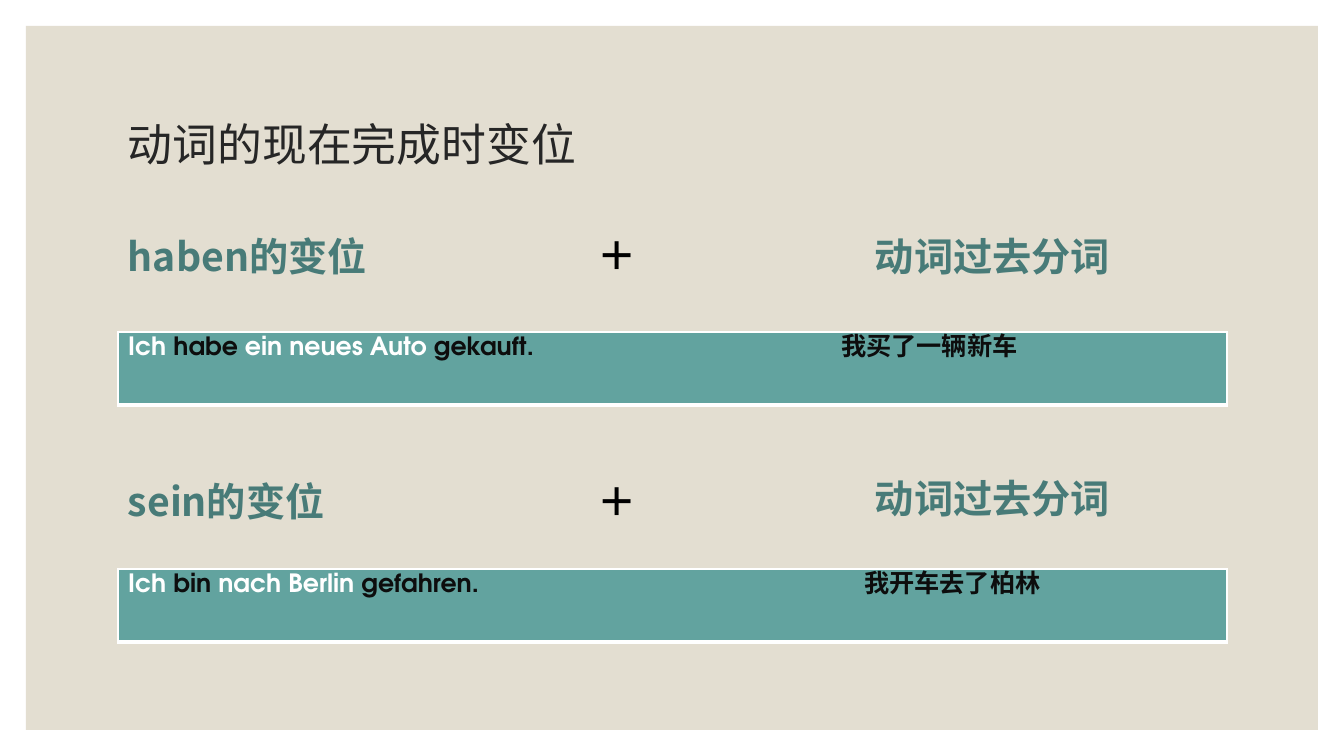
from dataclasses import dataclass

from pptx import Presentation
from pptx.dml.color import RGBColor as RGB
from pptx.enum.shapes import MSO_SHAPE as Shape
from pptx.enum.text import MSO_ANCHOR as Anchor
from pptx.oxml import parse_xml
from pptx.oxml.ns import nsdecls
from pptx.util import Pt

PX = 914400 / 100.8


@dataclass(frozen=True)
class Theme:
    sand: str = "E3DED1"
    teal: str = "62A39F"
    deep: str = "487B78"
    white: str = "FFFFFF"
    black: str = "000000"
    ink: str = "0D0D0D"
    head: str = "262626"
    han: str = "Noto Sans CJK SC"
    latin: str = "TeX Gyre Adventor"
    title: int = 32
    term: int = 28
    body: int = 18


def emu(*px):
    return [round(n * PX) for n in px]


class Deck:
    def __init__(self, theme):
        self.theme = theme
        self.prs = Presentation()
        self.prs.slide_width, self.prs.slide_height = emu(1344, 756)
        self.slide = self.prs.slides.add_slide(self.prs.slide_layouts[6])

    def panel(self, *box):
        shape = self.slide.shapes.add_shape(Shape.RECTANGLE, *emu(*box))
        shape.shadow.inherit = False
        shape.fill.solid()
        shape.fill.fore_color.rgb = RGB.from_string(self.theme.sand)
        shape.line.fill.background()

    def run(self, para, text, size, color, face, bold=True):
        run = para.add_run()
        run.text = text
        font = run.font
        font.size, font.bold, font.name = Pt(size), bold, face
        font.color.rgb = RGB.from_string(color)
        # East Asian text needs its own typeface entry.
        latin = run._r.rPr.find("{*}latin")
        latin.addnext(parse_xml(f'<a:ea {nsdecls("a")} typeface="{face}"/>'))

    def text(self, box, text, size, color, face, bold=True):
        frame = self.slide.shapes.add_textbox(*emu(*box)).text_frame
        frame.word_wrap = True
        self.run(frame.paragraphs[0], text, size, color, face, bold)
        return frame

    def border(self, cell, side, width):
        cell._tc.get_or_add_tcPr().append(parse_xml(
            f'<a:ln{side} {nsdecls("a")} w="{Pt(width)}"><a:solidFill>'
            f'<a:srgbClr val="{self.theme.white}"/></a:solidFill></a:ln{side}>'))

    def banner(self, box, parts, tab):
        """One-cell table; parts alternate white and dark, tab places the gloss."""
        look = self.theme
        table = self.slide.shapes.add_table(1, 1, *emu(*box)).table
        table.first_row = table.horz_banding = False
        cell = table.cell(0, 0)
        for side, width in zip("LRTB", (1, 1, 1, 3)):
            self.border(cell, side, width)
        cell.fill.solid()
        cell.fill.fore_color.rgb = RGB.from_string(look.teal)
        para = cell.text_frame.paragraphs[0]
        para._p.get_or_add_pPr().append(parse_xml(
            f'<a:tabLst {nsdecls("a")}><a:tab pos="{emu(tab)[0]}" algn="l"/></a:tabLst>'))
        for i, part in enumerate(parts):
            color = look.ink if i % 2 else look.white
            self.run(para, part, look.body, color, look.latin)


def main():
    look = Theme()
    deck = Deck(look)
    deck.panel(26, 26, 1292, 704)

    title = deck.text((118, 71, 1109, 151), "动词的现在完成时变位",
                      look.title, look.head, look.han, False)
    title.vertical_anchor = Anchor.MIDDLE
    title.paragraphs[0].line_spacing = 0.9

    rules = [
        ("haben的变位", (227, 226, 227), 332, 713,
         ("Ich ", "habe", " ein neues Auto ", "gekauft.\t我买了一辆新车")),
        ("sein的变位", (472, 472, 469), 569, 736,
         ("Ich ", "bin", " nach Berlin ", "gefahren.\t我开车去了柏林")),
    ]
    for verb, tops, top, tab, parts in rules:
        terms = [
            (118, 308, verb, look.deep, look.han),
            (588, 101, "＋", look.black, look.latin),
            (865, 272, "动词过去分词", look.deep, look.han),
        ]
        for y, (x, width, text, color, face) in zip(tops, terms):
            deck.text((x, y, width, 57), text, look.term, color, face)
        deck.banner((118, top, 1109, 73), parts, tab)

    deck.prs.save("out.pptx")


if __name__ == "__main__":
    main()
